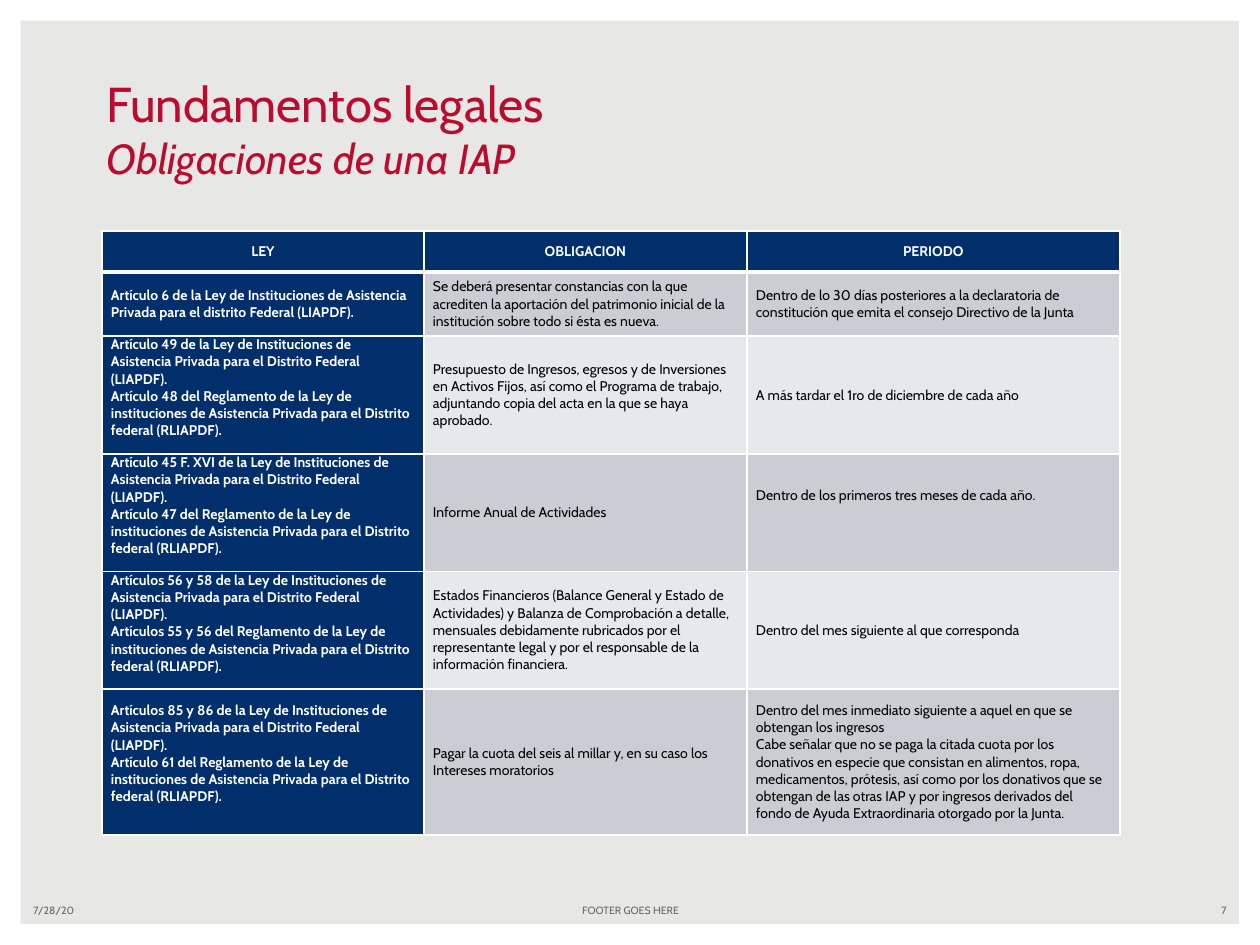
"""Build the slide on the legal obligations of an IAP."""
from lxml import etree
from pptx import Presentation
from pptx import util as u
from pptx.dml.color import RGBColor
from pptx.enum import shapes, text
from pptx.oxml.ns import qn

THEME = {
    "font": "Cabin", "background": "E7E7E5", "white": "FFFFFF", "black": "000000",
    "red": "BA0C2F", "navy": "002F6C", "gray": "6C6463",
    "bands": ("CCCDD4", "E7E8EB"),
    "title": 28, "subtitle": 24, "table": 8, "footer": 6,
}
LEFT, CENTER, RIGHT = text.PP_ALIGN.LEFT, text.PP_ALIGN.CENTER, text.PP_ALIGN.RIGHT


def px(value):
    return u.Emu(round(value * 914400 / 126))


def write(paragraph, content, size, color, bold=False, italic=False, align=LEFT):
    paragraph.alignment = align
    run = paragraph.add_run()
    run.text = content
    font = run.font
    font.name, font.size = THEME["font"], u.Pt(size)
    font.bold, font.italic = bold, italic
    font.color.rgb = RGBColor.from_string(color)


presentation = Presentation()
presentation.slide_width, presentation.slide_height = px(1260), px(945)
slide = presentation.slides.add_slide(presentation.slide_layouts[5])
slide.background.fill.solid()
slide.background.fill.fore_color.rgb = RGBColor.from_string(THEME["background"])

frame = slide.shapes.add_shape(shapes.MSO_SHAPE.FRAME, 0, 0, px(1260), px(945))
frame.adjustments[0] = 0.022
frame.shadow.inherit = False
frame.fill.solid()
frame.fill.fore_color.rgb = RGBColor.from_string(THEME["white"])
frame.line.fill.background()

footers = [
    (21, 294, "7/28/20", LEFT),
    (431, 399, "FOOTER GOES HERE", CENTER),
    (945, 294, "7", RIGHT),
]
for left, width, content, align in footers:
    box = slide.shapes.add_textbox(px(left), px(898), px(width), px(25))
    box.text_frame.word_wrap = True
    box.text_frame.vertical_anchor = text.MSO_ANCHOR.MIDDLE
    write(box.text_frame.paragraphs[0], content, THEME["footer"], THEME["gray"], align=align)

title = slide.shapes.title
title.left, title.top, title.width, title.height = px(94), px(63), px(1071), px(126)
title.text_frame.vertical_anchor = text.MSO_ANCHOR.BOTTOM
heading = title.text_frame.paragraphs[0]
write(heading, "Fundamentos legales", THEME["title"], THEME["red"])
heading.add_line_break()
write(heading, "Obligaciones de una IAP", THEME["subtitle"], THEME["red"], italic=True)

LAW = "de la Ley de Instituciones de Asistencia Privada para el Distrito Federal (LIAPDF)."
RULES = ("del Reglamento de la Ley de instituciones de Asistencia Privada "
         "para el Distrito federal (RLIAPDF).")
rows = [
    ("LEY", "OBLIGACION", "PERIODO"),
    ("Artículo 6 de la Ley de Instituciones de Asistencia Privada para el distrito "
     "Federal (LIAPDF).",
     "Se deberá presentar constancias con la que acrediten la aportación del patrimonio "
     "inicial de la institución sobre todo si ésta es nueva.",
     "Dentro de lo 30 días posteriores a la declaratoria de constitución que emita el "
     "consejo Directivo de la Junta"),
    (f"Artículo 49 {LAW}\nArtículo 48 {RULES}",
     "Presupuesto de Ingresos, egresos y de Inversiones en Activos Fijos, así como el "
     "Programa de trabajo, adjuntando copia del acta en la que se haya aprobado.",
     "A más tardar el 1ro de diciembre de cada año"),
    (f"Artículo 45 F. XVI {LAW}\nArtículo 47 {RULES}",
     "Informe Anual de Actividades",
     "Dentro de los primeros tres meses de cada año."),
    (f"Artículos 56 y 58 {LAW}\nArtículos 55 y 56 {RULES}",
     "Estados Financieros (Balance General y Estado de Actividades) y Balanza de "
     "Comprobación a detalle, mensuales debidamente rubricados por el representante legal "
     "y por el responsable de la información financiera.",
     "Dentro del mes siguiente al que corresponda"),
    (f"Artículos 85 y 86 {LAW}\nArtículo 61 {RULES}",
     "Pagar la cuota del seis al millar y, en su caso los Intereses moratorios",
     "Dentro del mes inmediato siguiente a aquel en que se obtengan los ingresos\n"
     "Cabe señalar que no se paga la citada cuota por los donativos en especie que "
     "consistan en alimentos, ropa, medicamentos, prótesis, así como por los donativos que "
     "se obtengan de las otras IAP y por ingresos derivados del fondo de Ayuda "
     "Extraordinaria otorgado por la Junta."),
]
column_widths = (322, 323, 373)
row_heights = (41, 64, 118, 112, 112, 146)
line_height = 17
bottom_margins = {(row, 0): line_height for row in range(2, 6)}
bottom_margins[3, 2] = 2 * line_height
thick_edges = ((0, "lnB"), (1, "lnT"))

table = slide.shapes.add_table(
    len(rows), len(column_widths), px(102), px(231),
    px(sum(column_widths)), px(sum(row_heights))).table
for column, width in zip(table.columns, column_widths):
    column.width = px(width)
for row, height in zip(table.rows, row_heights):
    row.height = px(height)

for row_index, row in enumerate(rows):
    for column_index, content in enumerate(row):
        cell = table.cell(row_index, column_index)
        header = row_index == 0
        dark = header or column_index == 0
        cell.vertical_anchor = text.MSO_ANCHOR.MIDDLE
        cell.margin_left = cell.margin_right = px(9)
        cell.margin_top = 0
        cell.margin_bottom = px(bottom_margins.get((row_index, column_index), 0))
        for index, line in enumerate(content.split("\n")):
            paragraph = cell.text_frame.add_paragraph() if index else cell.text_frame.paragraphs[0]
            write(paragraph, line, THEME["table"], THEME["white" if dark else "black"],
                  bold=dark, align=CENTER if header else LEFT)
        properties = cell._tc.get_or_add_tcPr()
        for side in ("lnL", "lnR", "lnT", "lnB"):
            width = u.Pt(3 if (row_index, side) in thick_edges else 1)
            border = etree.SubElement(properties, qn(f"a:{side}"), w=str(width))
            fill = etree.SubElement(border, qn("a:solidFill"))
            etree.SubElement(fill, qn("a:srgbClr"), val=THEME["white"])
        cell.fill.solid()
        cell.fill.fore_color.rgb = RGBColor.from_string(
            THEME["navy"] if dark else THEME["bands"][(row_index - 1) % 2])

presentation.save("out.pptx")
